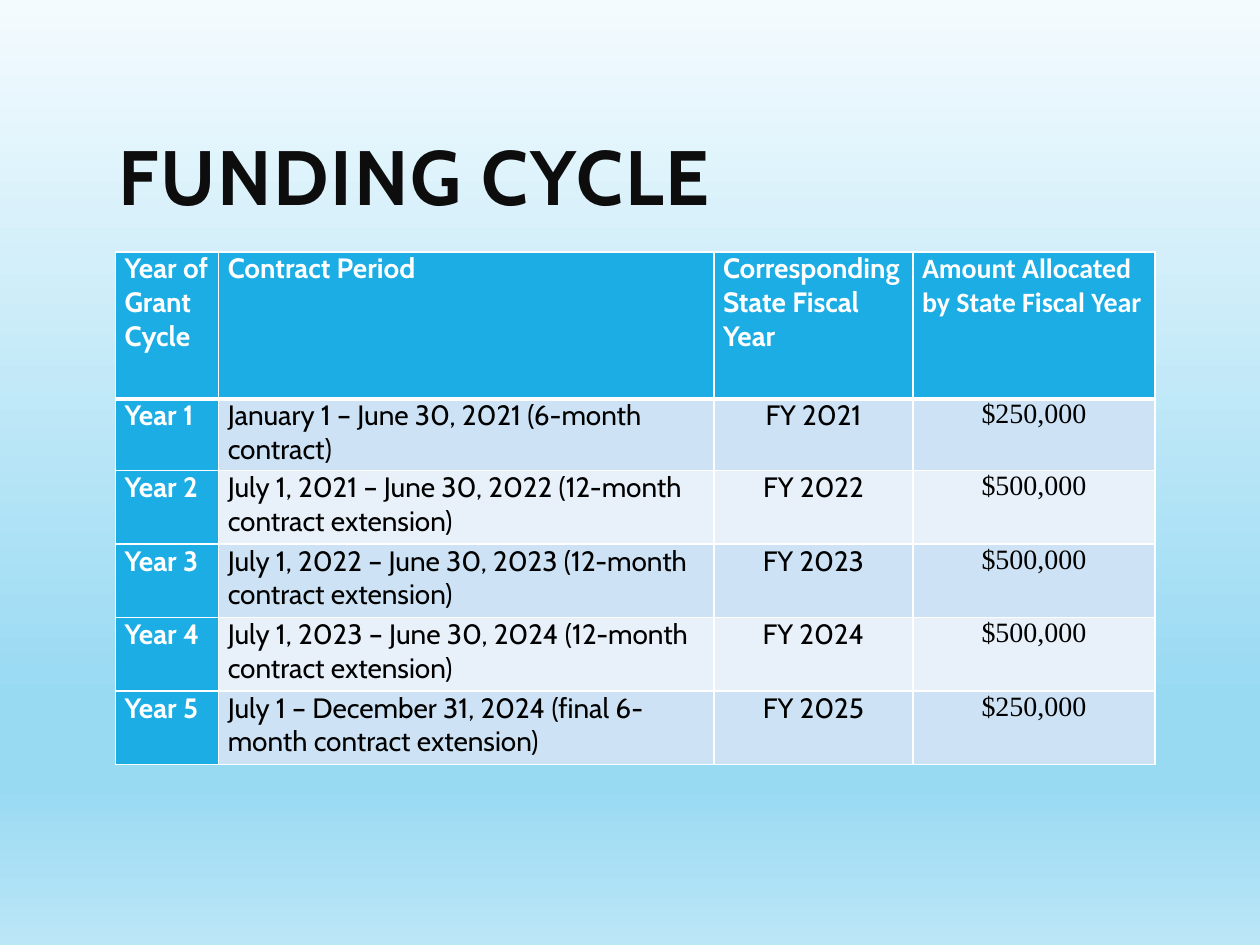
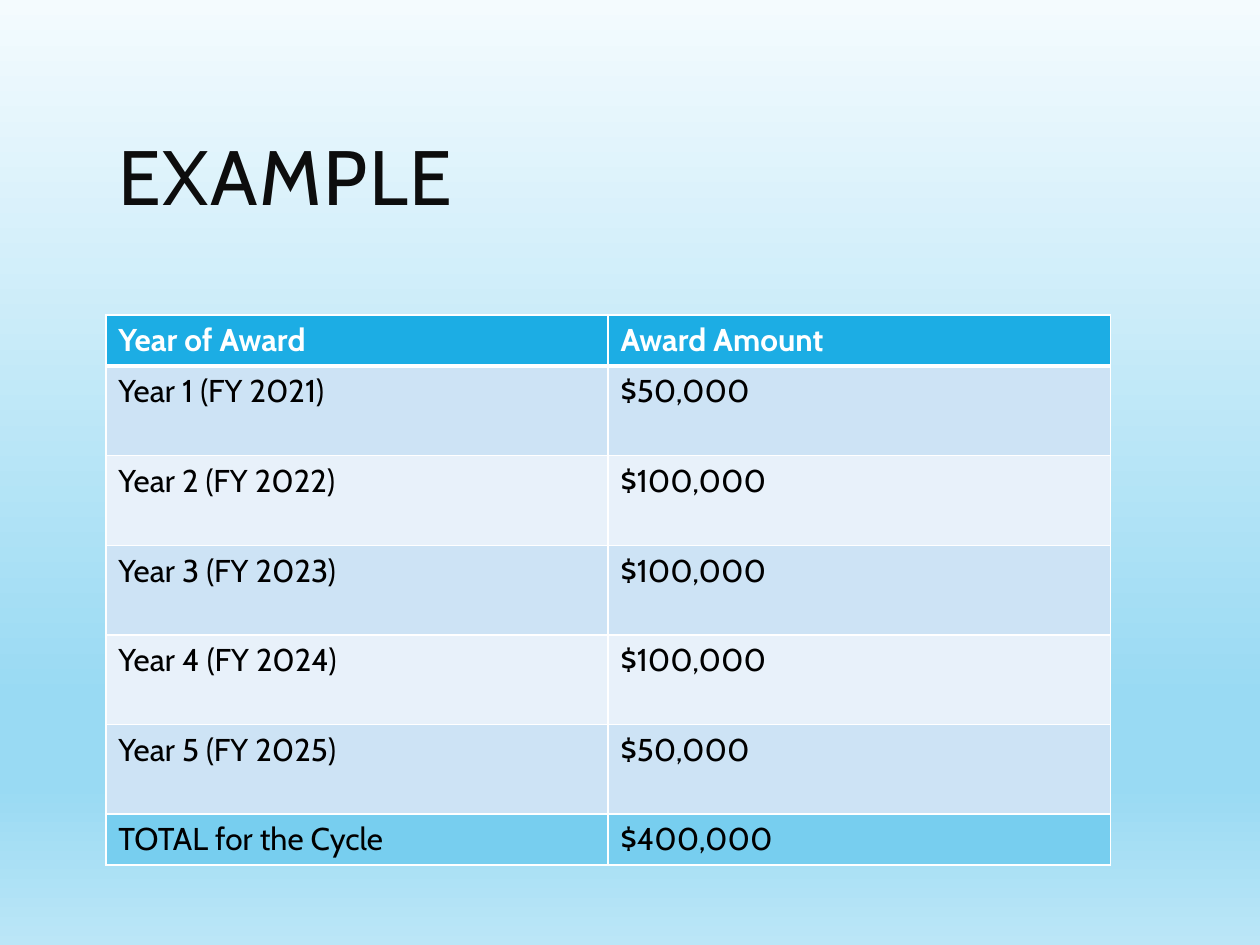
"""Build the two funding slides."""
from dataclasses import dataclass

from lxml import etree
from pptx import Presentation
from pptx.dml.color import RGBColor
from pptx.enum.text import MSO_ANCHOR, PP_ALIGN
from pptx.oxml.ns import qn
from pptx.util import Pt

LEFT, CENTER = PP_ALIGN.LEFT, PP_ALIGN.CENTER
MIDDLE = MSO_ANCHOR.MIDDLE


@dataclass(frozen=True)
class Theme:
    """Colours, fonts and sizes shared by the slides."""
    backdrop: tuple = ((0, "F4FBFE"), (74, "99DAF3"), (83, "99DAF3"), (100, "BBE6F7"))
    accent: str = "1CADE4"
    bands: tuple = ("CDE3F5", "E8F1FA")
    total: str = "77CEEF"
    title_ink: str = "0D0D0D"
    ink: str = "000000"
    white: str = "FFFFFF"
    font: str = "Cabin"
    header_font: str = "Calibri"
    amount_font: str = "Times New Roman"
    title_size: int = 44
    cycle_size: int = 16
    award_size: int = 18
    rule: int = 1
    header_rule: int = 3


THEME = Theme()

CYCLE_ROWS = [
    ("Year of Grant Cycle", "Contract Period", "Corresponding State Fiscal Year",
     "Amount Allocated by State Fiscal Year"),
    ("Year 1", "January 1 – June 30, 2021 (6-month contract)", "FY 2021", "$250,000"),
    ("Year 2", "July 1, 2021 – June 30, 2022 (12-month contract extension)", "FY 2022", "$500,000"),
    ("Year 3", "July 1, 2022 – June 30, 2023 (12-month contract extension)", "FY 2023", "$500,000"),
    ("Year 4", "July 1, 2023 – June 30, 2024 (12-month contract extension)", "FY 2024", "$500,000"),
    ("Year 5", "July 1 – December 31, 2024 (final 6-month contract extension)", "FY 2025", "$250,000"),
]
AWARD_ROWS = [
    ("Year of Award", "Award Amount"),
    ("Year 1 (FY 2021)", "$50,000"),
    ("Year 2 (FY 2022)", "$100,000"),
    ("Year 3 (FY 2023)", "$100,000"),
    ("Year 4 (FY 2024)", "$100,000"),
    ("Year 5 (FY 2025)", "$50,000"),
    ("TOTAL for the Cycle", "$400,000"),
]


def set_font(para, size, color, bold=False, name=THEME.font):
    """Set the font of a whole paragraph."""
    font = para.font
    font.name, font.size, font.bold = name, Pt(size), bold
    font.color.rgb = RGBColor.from_string(color)


def paint_backdrop(page):
    """Fill the page with the vertical gradient."""
    fill = page.background.fill
    fill.gradient()
    fill.gradient_angle = 270
    stops = page.element.find(".//" + qn("a:gsLst"))
    for stop in list(stops):
        stops.remove(stop)
    for position, color in THEME.backdrop:
        stop = etree.SubElement(stops, qn("a:gs"), pos=str(position * 1000))
        etree.SubElement(stop, qn("a:srgbClr"), val=color)


def add_title(page, text, bold):
    """Add the title in its shared place."""
    box = page.shapes.add_textbox(Pt(60.5), Pt(46), Pt(574), Pt(118))
    frame = box.text_frame
    frame.word_wrap = True
    frame.vertical_anchor = MIDDLE
    para = frame.paragraphs[0]
    span = para.add_run()
    span.text = text
    span.font._element.set("spc", "100")
    para.line_spacing = 0.8
    set_font(para, THEME.title_size, THEME.title_ink, bold)


def add_page(deck, title, bold=False):
    """Add a page with the backdrop and a title."""
    page = deck.slides.add_slide(deck.slide_layouts[6])
    paint_backdrop(page)
    add_title(page, title, bold)
    return page


def set_borders(cell, top, bottom):
    """Draw white lines on the four sides of a cell."""
    properties = cell._tc.get_or_add_tcPr()
    widths = {"L": THEME.rule, "R": THEME.rule, "T": top, "B": bottom}
    for side, width in widths.items():
        line = etree.SubElement(properties, qn("a:ln" + side), w=str(Pt(width)))
        fill = etree.SubElement(line, qn("a:solidFill"))
        etree.SubElement(fill, qn("a:srgbClr"), val=THEME.white)


def fill_cell(cell, text, fill, row):
    """Write a cell with its fill and borders, and return its paragraph."""
    set_borders(cell, THEME.header_rule if row == 1 else THEME.rule,
                THEME.header_rule if row == 0 else THEME.rule)
    cell.fill.solid()
    cell.fill.fore_color.rgb = RGBColor.from_string(fill)
    cell.text = text
    return cell.text_frame.paragraphs[0]


def add_grid(page, left, top, widths, heights):
    """Add an empty table with the given columns and rows."""
    table = page.shapes.add_table(len(heights), len(widths), Pt(left), Pt(top),
                                  Pt(sum(widths)), Pt(sum(heights))).table
    for column, width in zip(table.columns, widths):
        column.width = Pt(width)
    for row, height in zip(table.rows, heights):
        row.height = Pt(height)
    return table


def add_cycle_table(page):
    """Add the contract periods and the yearly allocation."""
    table = add_grid(page, 66, 144, [59, 283, 113.75, 138.25], [84, 41] + [42] * 4)
    table.first_col = True
    body_fonts = [THEME.font] * 3 + [THEME.amount_font]
    header_fonts = [THEME.font] * 3 + [THEME.header_font]
    for r, values in enumerate(CYCLE_ROWS):
        for c, text in enumerate(values):
            heading = r == 0 or c == 0
            fill = THEME.accent if heading else THEME.bands[(r - 1) % 2]
            cell = table.cell(r, c)
            cell.margin_left = cell.margin_right = Pt(5.2)
            cell.margin_top = cell.margin_bottom = 0
            para = fill_cell(cell, text, fill, r)
            para.alignment = CENTER if r > 0 and c > 1 else LEFT
            set_font(para, THEME.cycle_size, THEME.white if heading else THEME.ink,
                     heading, (body_fonts if r else header_fonts)[c])


def add_award_table(page):
    """Add the example awards and their total."""
    table = add_grid(page, 60.5, 180, [287, 287], [29.2] + [51.2] * 5 + [29.2])
    fills = [THEME.accent] + [THEME.bands[i % 2] for i in range(5)] + [THEME.total]
    for r, values in enumerate(AWARD_ROWS):
        for c, text in enumerate(values):
            para = fill_cell(table.cell(r, c), text, fills[r], r)
            set_font(para, THEME.award_size, THEME.ink if r else THEME.white, r == 0)


def main():
    """Build and save the deck."""
    deck = Presentation()
    deck.slide_width, deck.slide_height = Pt(720), Pt(540)
    add_cycle_table(add_page(deck, "FUNDING CYCLE", bold=True))
    add_award_table(add_page(deck, "EXAMPLE"))
    deck.save("out.pptx")


if __name__ == "__main__":
    main()
